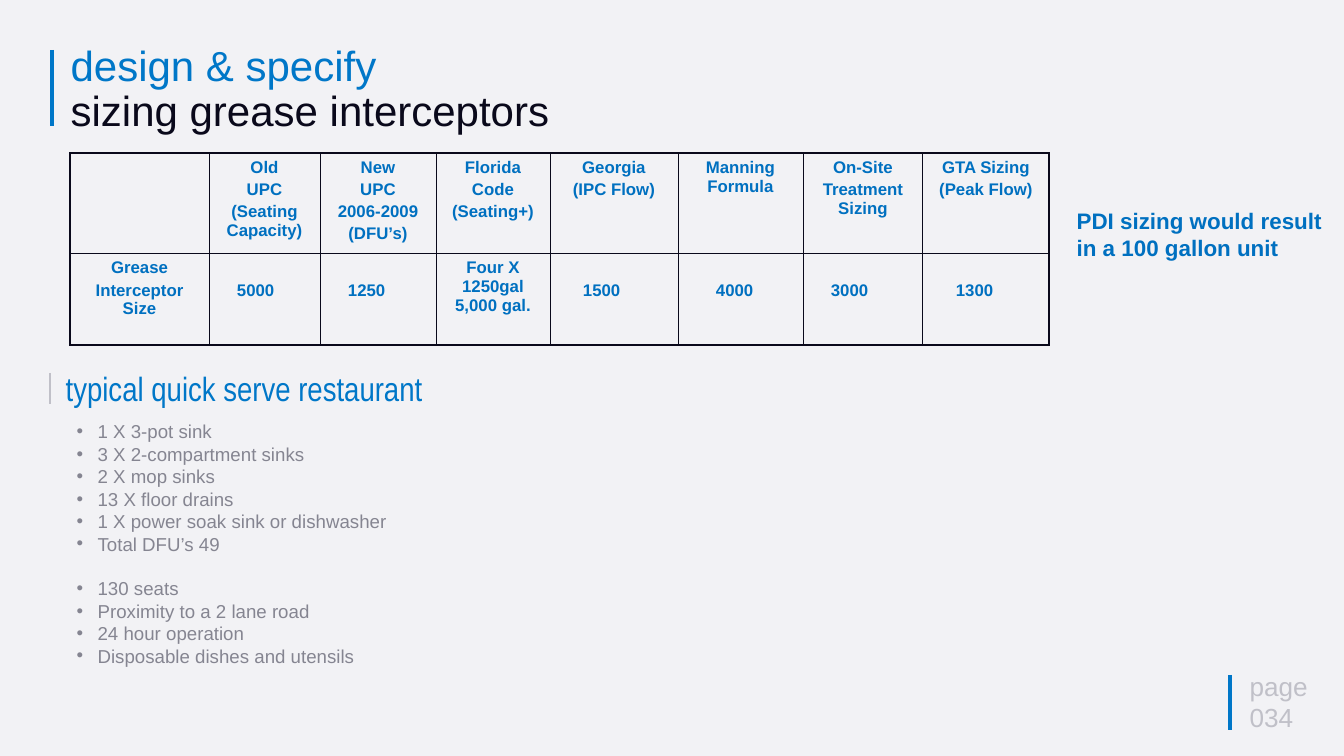
import pptx
import pptx.dml.color
import pptx.enum.shapes
import pptx.enum.text
import pptx.oxml.ns
import pptx.util
from lxml import etree

EMU_PER_PX = 914400 / 67.2
BLUE, TABLE_BLUE, INK = "0077C8", "0070C0", "0A091B"
GREY, LIGHT_GREY, PAPER = "858591", "C0C0C8", "F2F2F5"

COLUMN_WIDTHS = [139, 111, 116, 114, 128, 125, 120, 126]
ROW_HEIGHTS = [100, 91]
HEADERS = [
    "",
    "Old\nUPC\n(Seating Capacity)",
    "New\nUPC\n2006-2009\n(DFU’s)",
    "Florida\nCode\n(Seating+)",
    "Georgia\n(IPC Flow)",
    "Manning Formula",
    "On-Site\nTreatment Sizing",
    "GTA Sizing\n(Peak Flow)",
]
SIZES = ["Grease\nInterceptor Size", "5000", "1250", "Four X 1250gal 5,000 gal.",
         "1500", "4000", "3000", "1300"]
# Left margins of the plain numbers, by column
NUMBER_MARGINS = {1: 28, 2: 28, 4: 33, 5: 38, 6: 28, 7: 33}

FIXTURES = ["1 X 3-pot sink", "3 X 2-compartment sinks", "2 X mop sinks",
            "13 X floor drains", "1 X power soak sink or dishwasher", "Total DFU’s 49"]
SITE = ["130 seats", "Proximity to a 2 lane road", "24 hour operation",
        "Disposable dishes and utensils"]


def px(length):
    return pptx.util.Emu(round(length * EMU_PER_PX))


def color(value):
    return pptx.dml.color.RGBColor.from_string(value)


def add_child(parent, tag, **attributes):
    return etree.SubElement(parent, pptx.oxml.ns.qn(tag), attributes)


def style_runs(frame, size, tint, bold=False, name="Arial"):
    for paragraph in frame.paragraphs:
        for span in paragraph.runs:
            span.font.size = pptx.util.Pt(size)
            span.font.name = name
            span.font.bold = bold
            span.font.color.rgb = color(tint)


def add_text(page, left, top, width, height, text, size, tint, **style):
    box = page.shapes.add_textbox(px(left), px(top), px(width), px(height))
    frame = box.text_frame
    frame.word_wrap = True
    frame.text = text
    style_runs(frame, size, tint, **style)
    return frame


def add_bar(page, x, top, bottom, tint, weight):
    bar = page.shapes.add_connector(
        pptx.enum.shapes.MSO_CONNECTOR.STRAIGHT, px(x), px(top), px(x), px(bottom))
    bar.line.color.rgb = color(tint)
    bar.line.width = pptx.util.Pt(weight)
    add_child(bar._element.spPr, "a:effectLst")


def add_bullets(page, left, top, width, height, groups):
    """Bulleted groups, one empty line's height apart."""
    lines = [line for group in groups for line in group]
    frame = add_text(page, left, top, width, height, "\n".join(lines), 20, GREY)
    for paragraph in frame.paragraphs:
        properties = paragraph._p.get_or_add_pPr()
        properties.set("marL", str(px(21)))
        properties.set("indent", str(-px(21)))
        add_child(properties, "a:buFont", typeface="Arial")
        add_child(properties, "a:buChar", char="•")
        paragraph.line_spacing = pptx.util.Pt(24)
    start = 0
    for group in groups[:-1]:
        start += len(group)
        frame.paragraphs[start].space_before = pptx.util.Pt(24)


def set_borders(cell, weights):
    """Border weights in points, in the order left, right, top, bottom."""
    properties = cell._tc.get_or_add_tcPr()
    for position, (side, weight) in enumerate(zip("LRTB", weights)):
        line = add_child(properties, f"a:ln{side}", w=str(pptx.util.Pt(weight)))
        fill = add_child(line, "a:solidFill")
        add_child(fill, "a:srgbClr", val=INK)
        properties.insert(position, line)


def fill_cell(cell, text, number_margin):
    cell.fill.background()
    cell.margin_left = px(number_margin or 10)
    cell.margin_right = px(10)
    cell.margin_top = px(28 if number_margin else 5)
    cell.margin_bottom = px(5)
    frame = cell.text_frame
    frame.text = text
    align = pptx.enum.text.PP_ALIGN
    for index, paragraph in enumerate(frame.paragraphs):
        paragraph.alignment = align.LEFT if number_margin else align.CENTER
        if index:
            paragraph.space_before = pptx.util.Pt(3.6)
    style_runs(frame, 18, TABLE_BLUE, bold=True)


def add_sizing_table(page, left, top):
    rows = [HEADERS, SIZES]
    last_row, last_column = len(rows) - 1, len(HEADERS) - 1
    table = page.shapes.add_table(
        len(rows), len(HEADERS), px(left), px(top),
        px(sum(COLUMN_WIDTHS)), px(sum(ROW_HEIGHTS))).table
    table.first_row = table.horz_banding = False
    for column, width in zip(table.columns, COLUMN_WIDTHS):
        column.width = px(width)
    for row, height in zip(table.rows, ROW_HEIGHTS):
        row.height = px(height)
    for r, texts in enumerate(rows):
        for c, text in enumerate(texts):
            cell = table.cell(r, c)
            fill_cell(cell, text, NUMBER_MARGINS.get(c) if r else None)
            outer = (c == 0, c == last_column, r == 0, r == last_row)
            set_borders(cell, [2.25 if edge else 1 for edge in outer])


def add_title(page):
    frame = add_text(page, 64, 42, 759, 98,
                     "design & specify\vsizing grease interceptors", 45, BLUE)
    paragraph = frame.paragraphs[0]
    paragraph.line_spacing = 0.9
    paragraph.runs[1].font.color.rgb = color(INK)


def main():
    deck = pptx.Presentation()
    deck.slide_width, deck.slide_height = px(1344), px(756)
    page = deck.slides.add_slide(deck.slide_layouts[6])
    page.background.fill.solid()
    page.background.fill.fore_color.rgb = color(PAPER)

    add_bar(page, 52, 50, 126, BLUE, 5)
    add_title(page)
    add_bar(page, 1230, 675, 730, BLUE, 5)
    add_text(page, 1243, 667, 100, 70, "page\n034", 28, LIGHT_GREY)

    add_bar(page, 50, 373, 404, LIGHT_GREY, 3)
    add_text(page, 59, 365, 1210, 48, "typical quick serve restaurant", 36, BLUE,
             name="Arial Narrow")
    add_bullets(page, 70, 417, 1157, 255, [FIXTURES, SITE])

    add_sizing_table(page, 70, 153)
    add_text(page, 1070, 204, 263, 61, "PDI sizing would result in a 100 gallon unit",
             24, TABLE_BLUE, bold=True)
    deck.save("out.pptx")


if __name__ == "__main__":
    main()
